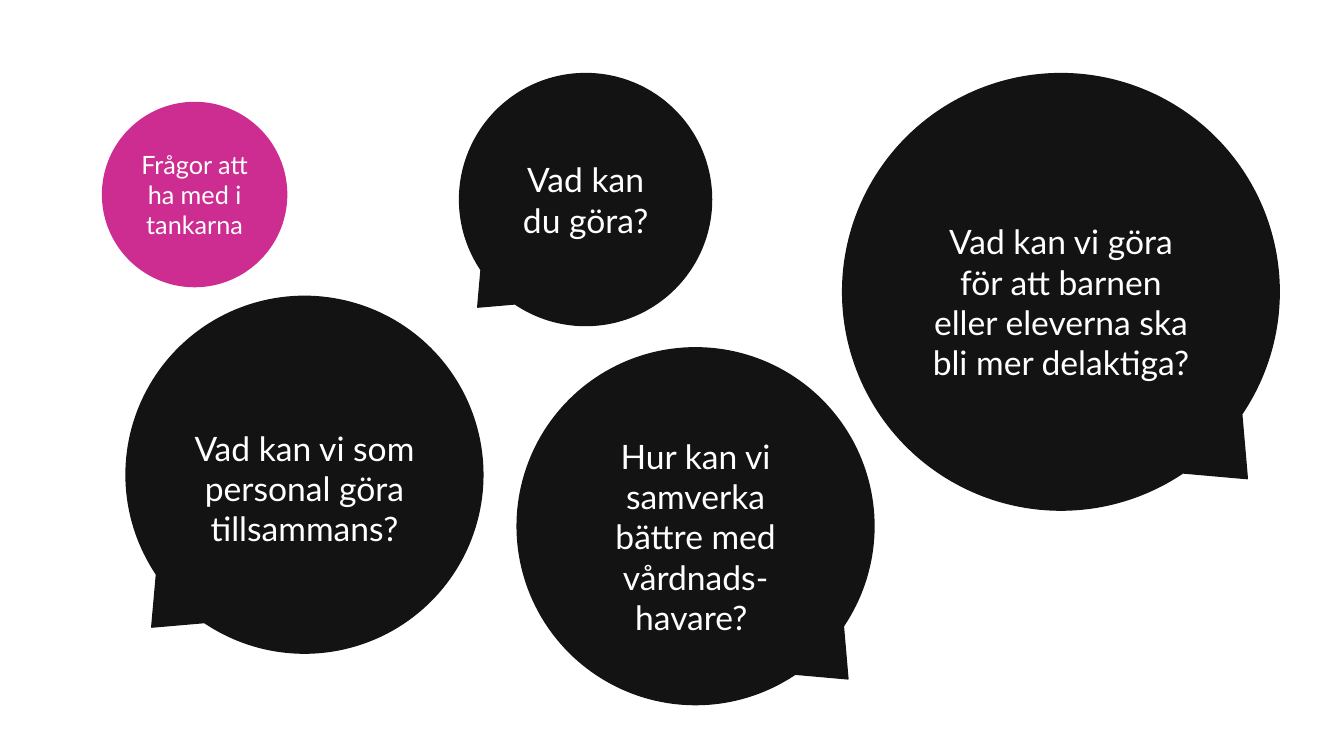
from pptx import Presentation
from pptx.dml.color import RGBColor
from pptx.enum.shapes import MSO_SHAPE
from pptx.enum.text import MSO_ANCHOR, PP_ALIGN
from pptx.util import Inches, Pt

CIRCLE = MSO_SHAPE.OVAL
BUBBLE = MSO_SHAPE.OVAL_CALLOUT
MIDDLE = MSO_ANCHOR.MIDDLE
CENTER = PP_ALIGN.CENTER

WIDTH, HEIGHT = Inches(13.333), Inches(7.5)
FONT = "Lato"
COLORS = {"pink": "CD2D90", "black": "131313", "white": "FFFFFF"}
TAIL = (-0.428, 0.427)  # tip of the bubble's tail, lower left

# Text insets in inches: left, top, right, bottom
PLAIN = (0.1, 0.05, 0.1, 0.05)
LOWERED = (0.08, 0.31, 0.08, 0.05)
TURNED = (0.08, 0.24, 0.28, 0.24)

# Question, left (% of width), top (% of height), diameter (% of width),
# insets, tail on the right
QUESTIONS = [
    ("Vad kan du göra?", 34.2, 9.73, 18.75, PLAIN, False),
    ("Vad kan vi som personal göra tillsammans?",
     9.38, 39.2, 26.55, LOWERED, False),
    ("Vad kan vi göra för att barnen eller eleverna ska bli mer delaktiga?",
     62.7, 9.73, 32.48, TURNED, True),
    ("Hur kan vi samverka bättre med vårdnads-havare? ",
     38.48, 46, 26.55, TURNED, True),
]


def color(name):
    return RGBColor.from_string(COLORS[name])


def add_round(slide, kind, text, left, top, diameter, fill, size, insets=PLAIN):
    side = int(WIDTH * diameter / 100)
    disc = slide.shapes.add_shape(
        kind, int(WIDTH * left / 100), int(HEIGHT * top / 100), side, side)
    disc.shadow.inherit = False
    disc.fill.solid()
    disc.fill.fore_color.rgb = color(fill)
    disc.line.fill.background()

    frame = disc.text_frame
    frame.word_wrap = True
    frame.vertical_anchor = MIDDLE
    (frame.margin_left, frame.margin_top,
     frame.margin_right, frame.margin_bottom) = map(Inches, insets)
    frame.text = text
    paragraph = frame.paragraphs[0]
    paragraph.alignment = CENTER
    font = paragraph.runs[0].font
    font.name, font.size = FONT, Pt(size)
    font.color.rgb = color("white")
    return disc


def add_question(slide, question, left, top, diameter, insets, tail_right):
    bubble = add_round(slide, BUBBLE, question, left, top, diameter,
                       "black", 24, insets)
    bubble.line.color.rgb = color("black")
    bubble.line.width = Pt(1)
    bubble.adjustments[0], bubble.adjustments[1] = TAIL
    if tail_right:
        # A quarter turn moves the tail; vertical text keeps the words upright
        bubble.rotation = 270
        bubble.text_frame._txBody.bodyPr.set("vert", "vert")


def main():
    deck = Presentation()
    deck.slide_width, deck.slide_height = WIDTH, HEIGHT
    slide = deck.slides.add_slide(deck.slide_layouts[6])

    # Topic label
    add_round(slide, CIRCLE, "Frågor att ha med i tankarna",
              7.58, 13.47, 13.8, "pink", 18)

    # Speech bubbles
    for question in QUESTIONS:
        add_question(slide, *question)

    deck.save("out.pptx")


if __name__ == "__main__":
    main()
